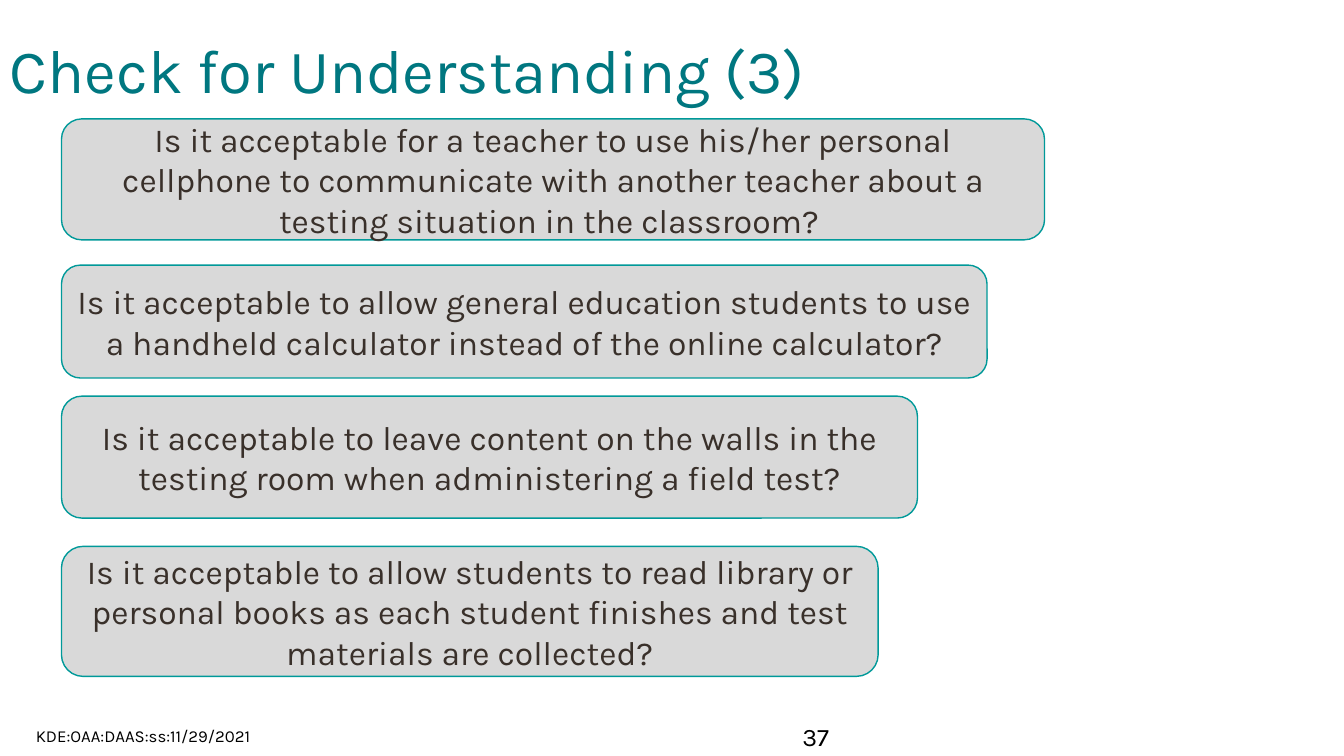
from pptx import Presentation
from pptx.dml.color import RGBColor
from pptx.enum.shapes import MSO_SHAPE as Shape
from pptx.enum.text import MSO_ANCHOR as Anchor, PP_ALIGN as Align
from pptx.util import Inches, Pt

QUESTION_LEFT = 0.61

# Top, width, height and wording of each question
QUESTIONS = [
    (1.18, 9.75, 1.2, "Is it acceptable for a teacher to use his/her personal cellphone "
                      "to communicate with another teacher about a testing situation "
                      "in the classroom? "),
    (2.63, 9.18, 1.12, "Is it acceptable to allow general education students to use "
                       "a handheld calculator instead of the online calculator?"),
    (3.93, 8.49, 1.21, "Is it acceptable to leave content on the walls in the "
                       "testing room when administering a field test?"),
    (5.42, 8.1, 1.29, "Is it acceptable to allow students to read library or personal "
                      "books as each student finishes and test materials are collected?"),
]


def color(value):
    return RGBColor.from_string(value)


class SlideBuilder:
    font = "Karla"
    black = "000000"
    title_color = "007780"
    question_color = "39302A"
    question_fill = "D9D9D9"
    question_line = "009999"

    def __init__(self, slide):
        self.slide = slide

    def set_text(self, shape, text, size, text_color, align, anchor):
        frame = shape.text_frame
        frame.word_wrap = True
        frame.vertical_anchor = anchor
        paragraph = frame.paragraphs[0]
        paragraph.text = text
        paragraph.alignment = align
        paragraph.font.name = self.font
        paragraph.font.size = Pt(size)
        paragraph.font.color.rgb = color(text_color)
        return paragraph

    def label(self, box, text, size, text_color=black, align=Align.LEFT, anchor=Anchor.MIDDLE):
        shape = self.slide.shapes.add_textbox(*map(Inches, box))
        return self.set_text(shape, text, size, text_color, align, anchor)

    def title(self, box, text):
        paragraph = self.label(box, text, 44, self.title_color)
        paragraph.line_spacing = 0.9

    def question(self, box, text):
        shape = self.slide.shapes.add_shape(Shape.ROUNDED_RECTANGLE, *map(Inches, box))
        shape.shadow.inherit = False
        shape.fill.solid()
        shape.fill.fore_color.rgb = color(self.question_fill)
        shape.line.color.rgb = color(self.question_line)
        shape.line.width = Pt(1)
        self.set_text(shape, text, 24, self.question_color, Align.CENTER, Anchor.MIDDLE)


def main():
    presentation = Presentation()
    presentation.slide_width = Inches(13.33)
    presentation.slide_height = Inches(7.5)
    builder = SlideBuilder(presentation.slides.add_slide(presentation.slide_layouts[6]))

    # Title
    builder.title((0, 0, 11.5, 1.45), "Check for Understanding (3)")

    # Footer and page number
    builder.label((0, 7.1, 2.84, 0.4), "KDE:OAA:DAAS:ss:11/29/2021", 12, align=Align.CENTER)
    builder.label((7.86, 7.11, 0.75, 0.4), "37", 18, anchor=Anchor.TOP)

    # Questions
    for top, width, height, text in QUESTIONS:
        builder.question((QUESTION_LEFT, top, width, height), text)

    presentation.save("out.pptx")


if __name__ == "__main__":
    main()
